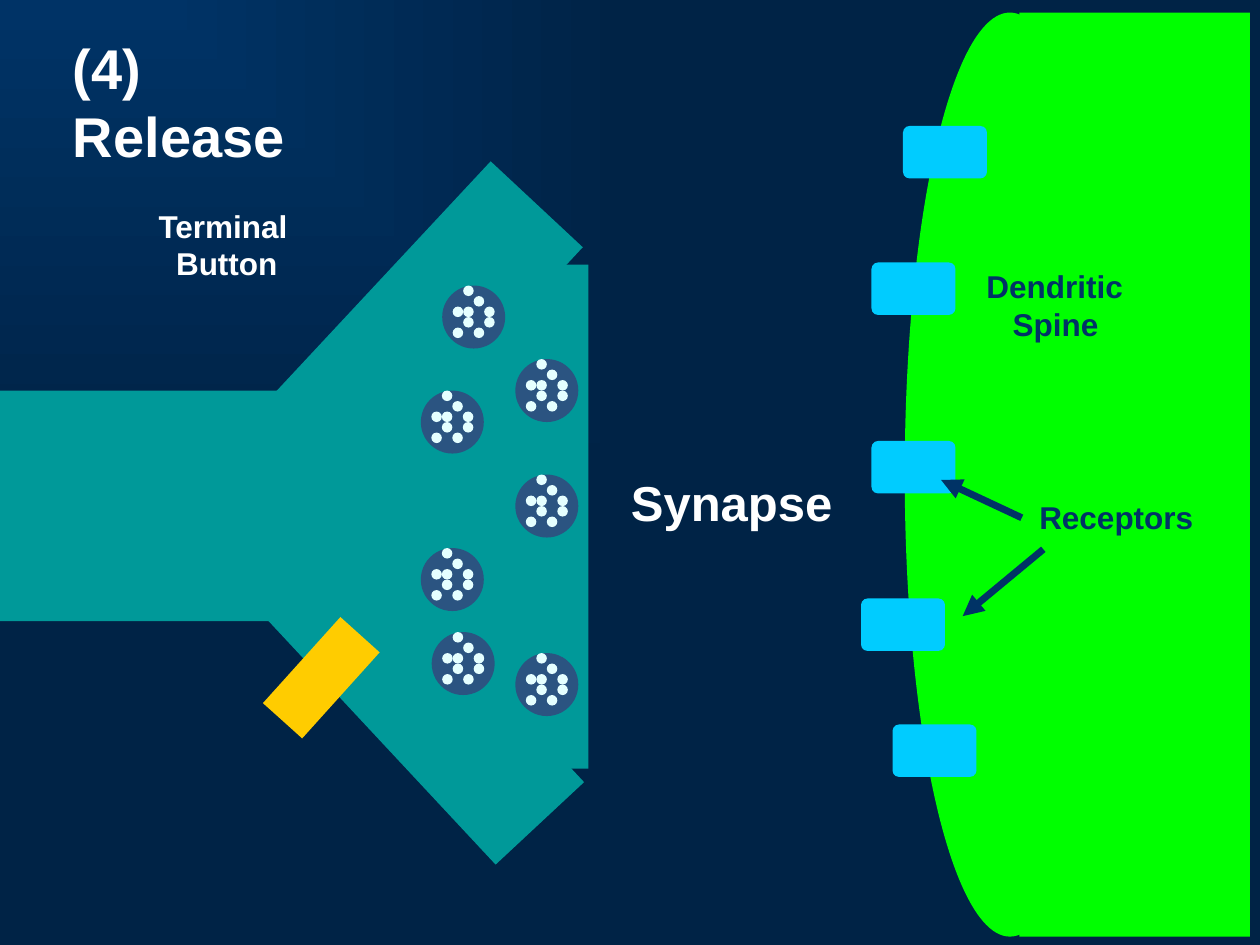
from lxml import etree
from pptx import Presentation
from pptx import util as u
from pptx.dml.color import RGBColor
from pptx.enum import shapes, text
from pptx.oxml.ns import qn

Pt = u.Pt
Kind = shapes.MSO_SHAPE

COLORS = {
    "glow": "003366", "night": "002346", "button": "009999",
    "vesicle": "2B5481", "transmitter": "E5FFFF", "spine": "00FF00",
    "receptor": "00CCFF", "channel": "FFCC00", "white": "FFFFFF", "navy": "003366",
}

# left, top, width, height, rotation
BUTTON_PARTS = [
    (0, 223.2, 335.5, 131.8, 0),
    (116.6, 163.4, 226.1, 72, 313),
    (123.8, 355.7, 219.6, 69.1, 47),
    (239, 151.2, 97.2, 288, 0),
]
CHANNEL = (168.5, 354.2, 30.2, 66.2, 42)

VESICLE_SIZE = 36
VESICLES = [(240.5, 223.2), (240.5, 313.2), (294.5, 271.2), (294.5, 205.2),
            (294.5, 373.2), (246.7, 361.2), (252.7, 163.2)]
DOT_SIZE = 6
DOT_CELLS = [(1, 2), (3, 4), (4, 2), (3, 1), (1, 4), (2, 2), (4, 3), (2, 0), (2, 3)]

SPINE_PARTS = [(Kind.OVAL, (517, 7.2, 120.2, 528)),
               (Kind.RECTANGLE, (582.5, 7.2, 131.8, 528))]
RECEPTOR_SIZE = (48, 30)
RECEPTORS = [(516, 72), (498, 150), (498, 252), (492, 342), (510, 414)]

# lines of text, left, top, width, height, size, colour, indent of later lines
LABELS = [
    (["Synapse"], 353.5, 266.4, 129.6, 40.3, 28, "white", 0),
    (["Terminal", "Button"], 83.5, 114.5, 114.5, 64.8, 18, "white", 10),
    (["Dendritic", "Spine"], 556.6, 149, 124.6, 64.8, 18, "navy", 15),
    (["(4)\vRelease"], 34.6, 15.8, 191.5, 84, 32, "white", 0),
    (["Receptors"], 586.8, 280.8, 131.8, 36, 18, "navy", 0),
]
ARROWS = [((596.2, 313.9), (550.1, 352.1)), ((583.9, 295.9), (537.8, 274.3))]


def rgb(name):
    return RGBColor.from_string(COLORS[name])


def paint_background(page):
    """Fill the page with a gradient spreading from its top left corner."""
    fill = page.background.fill
    fill.gradient()
    for stop, name in zip(fill.gradient_stops, ("glow", "night")):
        stop.color.rgb = rgb(name)
    gradient = page._element.find(".//" + qn("a:gradFill"))
    gradient.remove(gradient.find(qn("a:lin")))
    spread = etree.SubElement(gradient, qn("a:path"), {"path": "rect"})
    etree.SubElement(spread, qn("a:fillToRect"), {"r": "100000", "b": "100000"})


def add_filled(parent, kind, frame, color, rotation=0):
    shape = parent.shapes.add_shape(kind, *(Pt(value) for value in frame))
    shape.shadow.inherit = False
    shape.fill.solid()
    shape.fill.fore_color.rgb = rgb(color)
    shape.line.fill.background()
    shape.rotation = rotation
    return shape


def add_vesicle(page, left, top):
    group = page.shapes.add_group_shape()
    add_filled(group, Kind.OVAL, (left, top, VESICLE_SIZE, VESICLE_SIZE), "vesicle")
    for column, row in DOT_CELLS:
        frame = (left + column * DOT_SIZE, top + row * DOT_SIZE, DOT_SIZE, DOT_SIZE)
        add_filled(group, Kind.OVAL, frame, "transmitter")


def add_label(page, lines, left, top, width, height, size, color, indent):
    box = page.shapes.add_textbox(Pt(left), Pt(top), Pt(width), Pt(height))
    frame = box.text_frame
    frame.word_wrap = True
    frame.vertical_anchor = text.MSO_ANCHOR.TOP
    frame.text = "\n".join(lines)
    for number, para in enumerate(frame.paragraphs):
        font = para.font
        font.name, font.size, font.bold = "Arial", Pt(size), True
        font.color.rgb = rgb(color)
        if number and indent:
            para._p.get_or_add_pPr().set("marL", str(Pt(indent)))


def add_arrow(page, start, end):
    arrow = page.shapes.add_connector(
        shapes.MSO_CONNECTOR.STRAIGHT, *(Pt(value) for value in start + end))
    arrow.line.color.rgb = rgb("navy")
    arrow.line.width = Pt(4)
    etree.SubElement(arrow.line._get_or_add_ln(), qn("a:tailEnd"), {"type": "triangle"})
    etree.SubElement(arrow._element.spPr, qn("a:effectLst"))


def main():
    deck = Presentation()
    deck.slide_width, deck.slide_height = Pt(720), Pt(540)
    page = deck.slides.add_slide(deck.slide_layouts[6])
    paint_background(page)

    button = page.shapes.add_group_shape()
    for *frame, rotation in BUTTON_PARTS:
        add_filled(button, Kind.RECTANGLE, frame, "button", rotation)
    for left, top in VESICLES:
        add_vesicle(page, left, top)

    spine = page.shapes.add_group_shape()
    for kind, frame in SPINE_PARTS:
        add_filled(spine, kind, frame, "spine")
    receptors = page.shapes.add_group_shape()
    for corner in RECEPTORS:
        receptor = add_filled(receptors, Kind.ROUNDED_RECTANGLE,
                              corner + RECEPTOR_SIZE, "receptor")
        receptor.adjustments[0] = 0.125

    *frame, rotation = CHANNEL
    add_filled(page, Kind.RECTANGLE, frame, "channel", rotation)
    for label in LABELS:
        add_label(page, *label)
    for start, end in ARROWS:
        add_arrow(page, start, end)
    deck.save("out.pptx")


if __name__ == "__main__":
    main()
